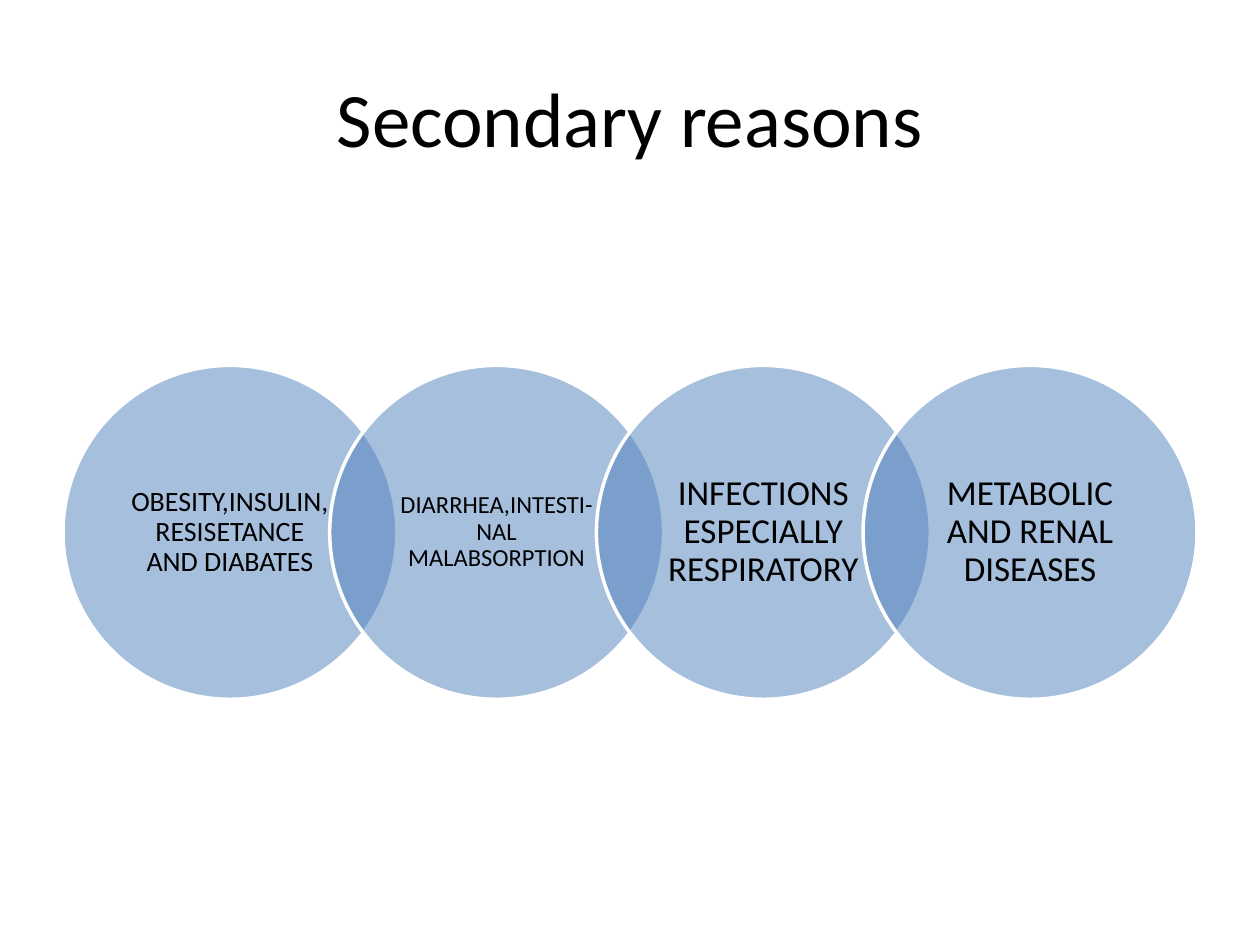
from lxml.etree import SubElement
from pptx import Presentation
from pptx.dml.color import RGBColor
from pptx.enum.shapes import MSO_SHAPE as Shape
from pptx.enum.text import MSO_ANCHOR as Anchor, PP_ALIGN as Align
from pptx.oxml.ns import qn
from pptx.util import Inches, Pt

# Content: wording and text size of each circle
TITLE = "Secondary reasons"
REASONS = [
    ("OBESITY,INSULIN,RESISETANCE AND DIABATES", 16),
    ("DIARRHEA,INTESTI-NAL MALABSORPTION", 14),
    ("INFECTIONS ESPECIALLY RESPIRATORY", 20),
    ("METABOLIC AND RENAL DISEASES", 20),
]

FONT = "Calibri"
BLACK = RGBColor(0x00, 0x00, 0x00)
WHITE = RGBColor(0xFF, 0xFF, 0xFF)
BLUE = RGBColor(0x4F, 0x81, 0xBD)

# Layout in inches: circles overlap evenly across the content width
MARGIN, CONTENT_WIDTH = 0.5, 9
CIRCLE_TOP, DIAMETER = 2.9, 2.65
STEP = (CONTENT_WIDTH - DIAMETER) / (len(REASONS) - 1)


def write(frame, wording, size):
    frame.text = wording
    frame.word_wrap = True
    frame.vertical_anchor = Anchor.MIDDLE
    paragraph = frame.paragraphs[0]
    paragraph.alignment = Align.CENTER
    font = paragraph.runs[0].font
    font.name, font.size, font.color.rgb = FONT, Pt(size), BLACK
    return paragraph


def add_reason(slide, index, wording, size):
    circle = slide.shapes.add_shape(
        Shape.OVAL, Inches(MARGIN + index * STEP), Inches(CIRCLE_TOP),
        Inches(DIAMETER), Inches(DIAMETER))
    circle.shadow.inherit = False
    circle.fill.solid()
    circle.fill.fore_color.rgb = BLUE
    # Half-transparent fill lets the overlaps show darker
    color = circle.fill._xPr.find(qn("a:solidFill")).find(qn("a:srgbClr"))
    SubElement(color, qn("a:alpha"), val="50000")
    circle.line.color.rgb = WHITE
    circle.line.width = Pt(2)

    frame = circle.text_frame
    frame.margin_left = frame.margin_right = Inches(0.15)
    frame.margin_top = frame.margin_bottom = Inches(0.02)
    write(frame, wording, size).line_spacing = 0.9


def main():
    prs = Presentation()
    prs.slide_width, prs.slide_height = Inches(10), Inches(7.5)
    slide = prs.slides.add_slide(prs.slide_layouts[5])

    # Title
    title = slide.shapes.title
    title.left, title.top = Inches(MARGIN), Inches(0.3)
    title.width, title.height = Inches(CONTENT_WIDTH), Inches(1.25)
    write(title.text_frame, TITLE, 44)

    # Chain of overlapping circles
    for index, (wording, size) in enumerate(REASONS):
        add_reason(slide, index, wording, size)

    prs.save("out.pptx")


if __name__ == "__main__":
    main()
